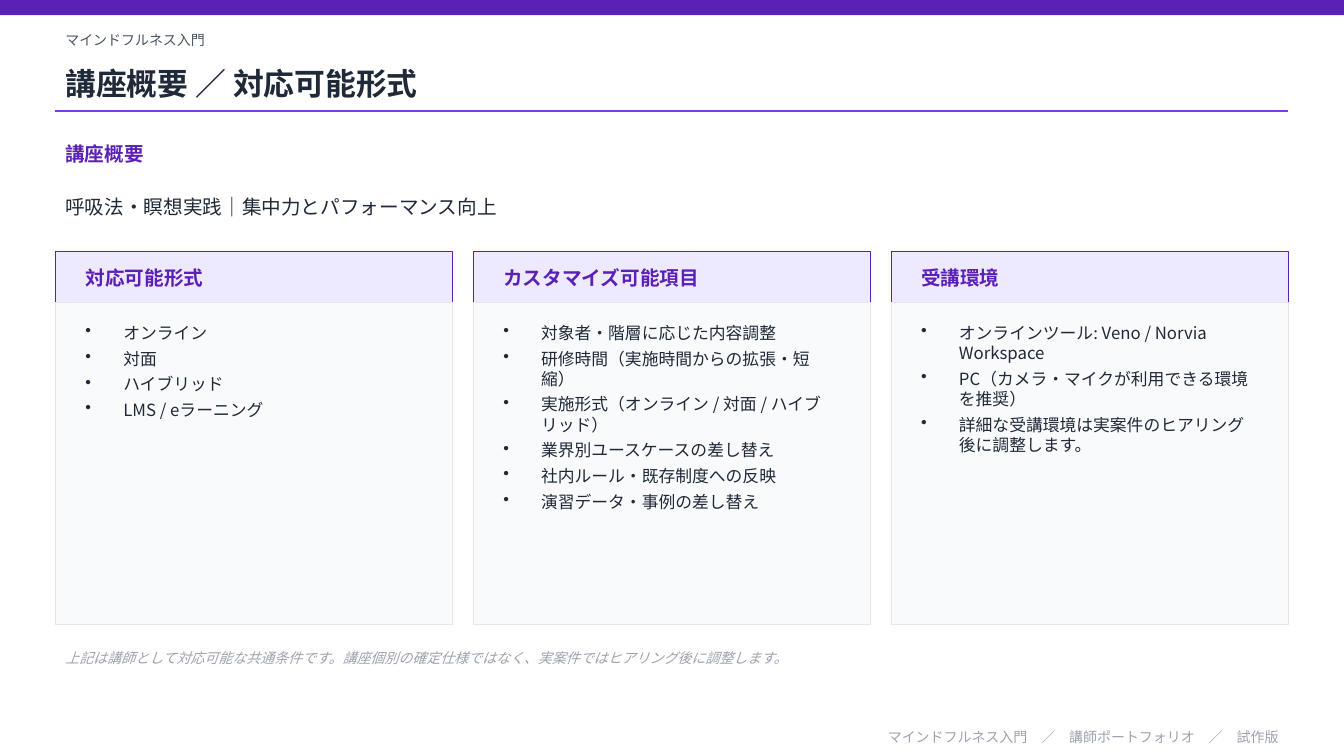
import lxml.etree
import pptx
import pptx.dml.color
import pptx.enum.shapes
import pptx.enum.text
import pptx.oxml.ns
import pptx.util

Pt = pptx.util.Pt
qn = pptx.oxml.ns.qn
color = pptx.dml.color.RGBColor.from_string
ALIGN = pptx.enum.text.PP_ALIGN
ANCHOR = pptx.enum.text.MSO_ANCHOR

FONT = "Noto Sans CJK JP"
PURPLE, DARK, GRAY = "5B21B6", "1F2937", "9CA3AF"
LEFT, WIDTH = 39.6, 880.56
GAP = 14.76
CARD_WIDTH = (WIDTH - 2 * GAP) / 3
PADDING = 14.4

deck = pptx.Presentation()
deck.slide_width, deck.slide_height = Pt(960), Pt(540)
page = deck.slides.add_slide(deck.slide_layouts[5])


def write_text(frame, lines, size, hex_color, bold=False, italic=False,
               align=ALIGN.LEFT, anchor=ANCHOR.MIDDLE, bullets=False):
    """Fill a text frame with one paragraph per line, all in one style."""
    frame.word_wrap = True
    frame.auto_size = pptx.enum.text.MSO_AUTO_SIZE.NONE
    frame.vertical_anchor = anchor
    for index, line in enumerate(lines):
        para = frame.add_paragraph() if index else frame.paragraphs[0]
        para.alignment = align
        if bullets:
            properties = para._p.get_or_add_pPr()
            properties.set("marL", str(Pt(27)))
            properties.set("indent", str(Pt(-27)))
            lxml.etree.SubElement(properties, qn("a:buChar"), char="•")
            para.space_after = Pt(4)
        span = para.add_run()
        span.text = line
        span.font.name = FONT
        span.font.size = Pt(size)
        span.font.bold = bold
        span.font.italic = italic
        span.font.color.rgb = color(hex_color)
        lxml.etree.SubElement(span._r.rPr, qn("a:ea"), typeface=FONT)


def add_panel(left, top, width, height, fill, line=None):
    panel = page.shapes.add_shape(pptx.enum.shapes.MSO_SHAPE.RECTANGLE,
                                  Pt(left), Pt(top), Pt(width), Pt(height))
    panel.shadow.inherit = False
    panel.fill.solid()
    panel.fill.fore_color.rgb = color(fill)
    if line:
        panel.line.color.rgb = color(line)
        panel.line.width = Pt(0.75)
    else:
        panel.line.fill.background()


# Title, top bar and rule
title = page.shapes.title
title.left, title.top = Pt(LEFT), Pt(39.6)
title.width, title.height = Pt(WIDTH), Pt(39.6)
write_text(title.text_frame, ["講座概要 ／ 対応可能形式"], 22, DARK, bold=True)

add_panel(0, 0, 960, 10.8, PURPLE)

rule = page.shapes.add_connector(pptx.enum.shapes.MSO_CONNECTOR.STRAIGHT,
                                 Pt(LEFT), Pt(79.2), Pt(LEFT + WIDTH), Pt(79.2))
rule.line.color.rgb = color("7C3AED")
rule.line.width = Pt(1)
lxml.etree.SubElement(rule._element.spPr, qn("a:effectLst"))

# Full-width lines of text: top, height, text, size, colour, style
text_lines = [
    (18, 21.6, "マインドフルネス入門", 10, "4B5563", {}),
    (97.2, 25.2, "講座概要", 14, PURPLE, {"bold": True}),
    (126, 43.2, "呼吸法・瞑想実践｜集中力とパフォーマンス向上", 14, DARK, {}),
    (457.2, 25.2, "上記は講師として対応可能な共通条件です。講座個別の確定仕様ではなく、"
     "実案件ではヒアリング後に調整します。", 10, GRAY, {"italic": True}),
    (518.4, 15.84, "マインドフルネス入門　／　講師ポートフォリオ　／　試作版", 10, GRAY,
     {"align": ALIGN.RIGHT}),
]
for top, height, text, size, hex_color, style in text_lines:
    box = page.shapes.add_textbox(Pt(LEFT), Pt(top), Pt(WIDTH), Pt(height))
    write_text(box.text_frame, [text], size, hex_color, **style)

# Three cards
cards = [
    ("対応可能形式", ["オンライン", "対面", "ハイブリッド", "LMS / eラーニング"]),
    ("カスタマイズ可能項目", [
        "対象者・階層に応じた内容調整",
        "研修時間（実施時間からの拡張・短縮）",
        "実施形式（オンライン / 対面 / ハイブリッド）",
        "業界別ユースケースの差し替え",
        "社内ルール・既存制度への反映",
        "演習データ・事例の差し替え",
    ]),
    ("受講環境", [
        "オンラインツール: Veno / Norvia Workspace",
        "PC（カメラ・マイクが利用できる環境を推奨）",
        "詳細な受講環境は実案件のヒアリング後に調整します。",
    ]),
]
for column, (heading, items) in enumerate(cards):
    left = LEFT + column * (CARD_WIDTH + GAP)
    text_left, text_width = Pt(left + PADDING), Pt(CARD_WIDTH - 2 * PADDING)

    add_panel(left, 180, CARD_WIDTH, 36, "EDE9FE", PURPLE)
    heading_box = page.shapes.add_textbox(text_left, Pt(180), text_width, Pt(36))
    write_text(heading_box.text_frame, [heading], 14, PURPLE, bold=True)

    add_panel(left, 216, CARD_WIDTH, 230.4, "F9FAFB", "E5E7EB")
    item_box = page.shapes.add_textbox(text_left, Pt(226.8), text_width, Pt(205.2))
    write_text(item_box.text_frame, items, 12, DARK, anchor=ANCHOR.TOP, bullets=True)

deck.save("out.pptx")
